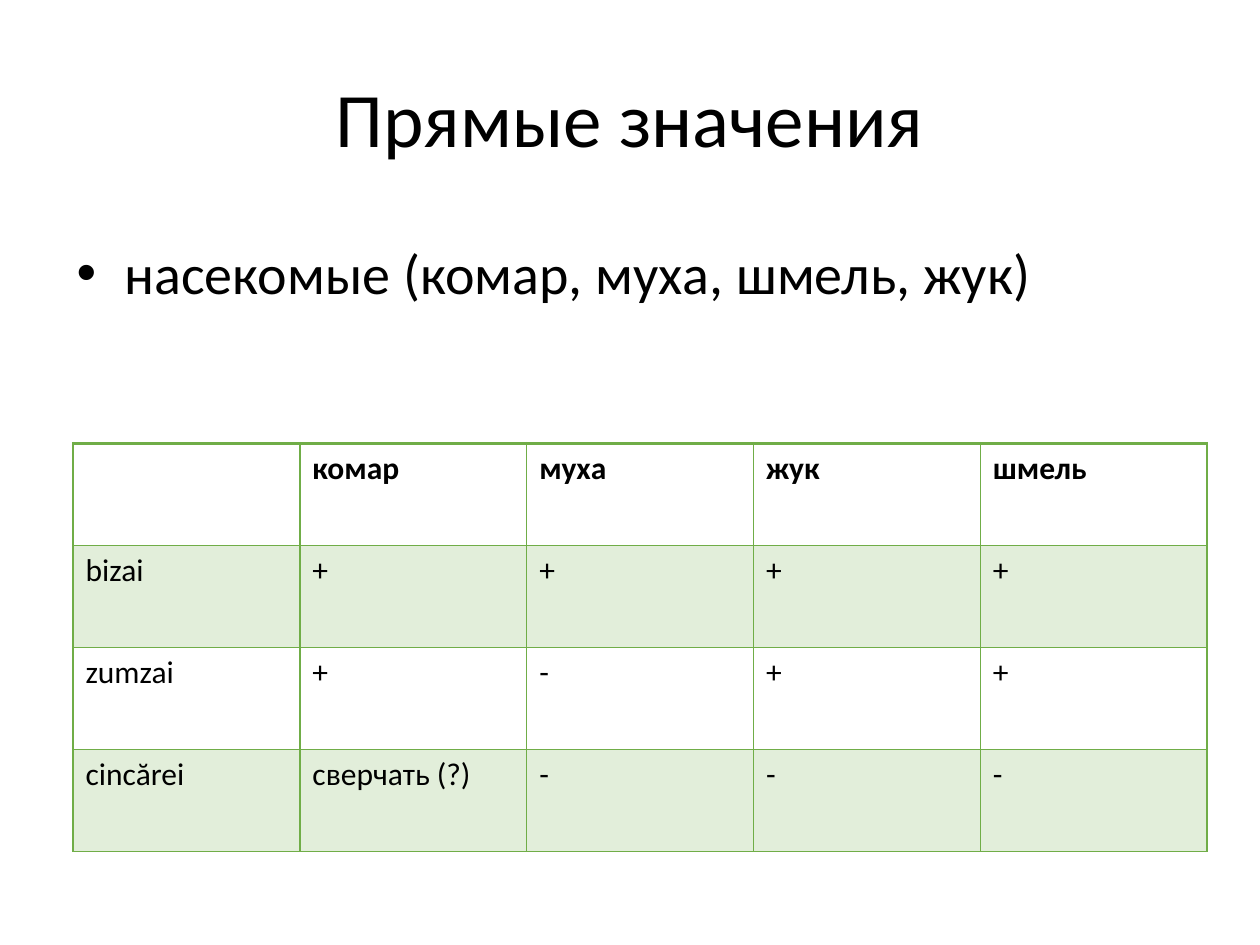
import pptx
import pptx.util
import pptx.dml.color
import pptx.enum.text
import pptx.oxml
import pptx.oxml.ns
from lxml import etree

Inches, Pt = pptx.util.Inches, pptx.util.Pt
RGBColor = pptx.dml.color.RGBColor

# Content
TITLE = "Прямые значения"
BULLET = "насекомые (комар, муха, шмель, жук)"
ROWS = [
    ["", "комар", "муха", "жук", "шмель"],
    ["bizai", "+", "+", "+", "+"],
    ["zumzai", "+", "-", "+", "+"],
    ["cincărei", "сверчать (?)", "-", "-", "-"],
]

# Style
FONT = "Calibri"
BLACK = RGBColor(0x00, 0x00, 0x00)
GREEN = RGBColor(0x70, 0xAD, 0x47)
BAND_OPACITY = 20
COLUMN_WIDTH, ROW_HEIGHT = 1.8, 0.81


def qualified(tag):
    return pptx.oxml.ns.qn(tag)


def place(shape, left, top, width, height):
    shape.left, shape.top = Inches(left), Inches(top)
    shape.width, shape.height = Inches(width), Inches(height)


def add_text(para, text, size, bold=False):
    span = para.add_run()
    span.text = text
    span.font.name = FONT
    span.font.size = Pt(size)
    span.font.bold = bold
    span.font.color.rgb = BLACK


def add_bullet(para, indent):
    properties = para._p.get_or_add_pPr()
    properties.set("marL", str(Inches(indent)))
    properties.set("indent", str(-Inches(indent)))
    etree.SubElement(properties, qualified("a:buFont"), typeface="Arial")
    etree.SubElement(properties, qualified("a:buChar"), char="•")


def add_borders(cell, top_width):
    properties = cell._tc.get_or_add_tcPr()
    for side, width in (("L", 1), ("R", 1), ("T", top_width), ("B", 1)):
        line = etree.SubElement(properties, qualified(f"a:ln{side}"), w=str(Pt(width)))
        fill = etree.SubElement(line, qualified("a:solidFill"))
        etree.SubElement(fill, qualified("a:srgbClr"), val=str(GREEN))


def fill_band(cell):
    cell.fill.solid()
    cell.fill.fore_color.rgb = GREEN
    color = cell._tc.tcPr.find(qualified("a:solidFill") + "/" + qualified("a:srgbClr"))
    etree.SubElement(color, qualified("a:alpha"), val=str(BAND_OPACITY * 1000))


def build():
    deck = pptx.Presentation()
    deck.slide_width, deck.slide_height = Inches(10), Inches(7.5)
    page = deck.slides.add_slide(deck.slide_layouts[5])

    # Title
    title = page.shapes.title
    place(title, 0.5, 0.3, 9, 1.25)
    title.text_frame.vertical_anchor = pptx.enum.text.MSO_ANCHOR.MIDDLE
    para = title.text_frame.paragraphs[0]
    para.alignment = pptx.enum.text.PP_ALIGN.CENTER
    add_text(para, TITLE, 44)

    # Bulleted statement
    box = page.shapes.add_textbox(Inches(0.51), Inches(1.84), Inches(9), Inches(4.95))
    box.text_frame.word_wrap = True
    para = box.text_frame.paragraphs[0]
    para.space_before = Pt(6.4)
    add_bullet(para, 0.38)
    add_text(para, BULLET, 32)

    # Table of verbs by insect
    row_count, column_count = len(ROWS), len(ROWS[0])
    table = page.shapes.add_table(
        row_count, column_count, Inches(0.58), Inches(3.52),
        Inches(COLUMN_WIDTH * column_count), Inches(ROW_HEIGHT * row_count)).table
    table.horz_banding = False
    for row, texts in enumerate(ROWS):
        for column, text in enumerate(texts):
            cell = table.cell(row, column)
            add_borders(cell, top_width=2 if row == 0 else 1)
            if row % 2:
                fill_band(cell)
            else:
                cell.fill.background()
            if text:
                add_text(cell.text_frame.paragraphs[0], text, 18, bold=row == 0)

    deck.save("out.pptx")


if __name__ == "__main__":
    build()
